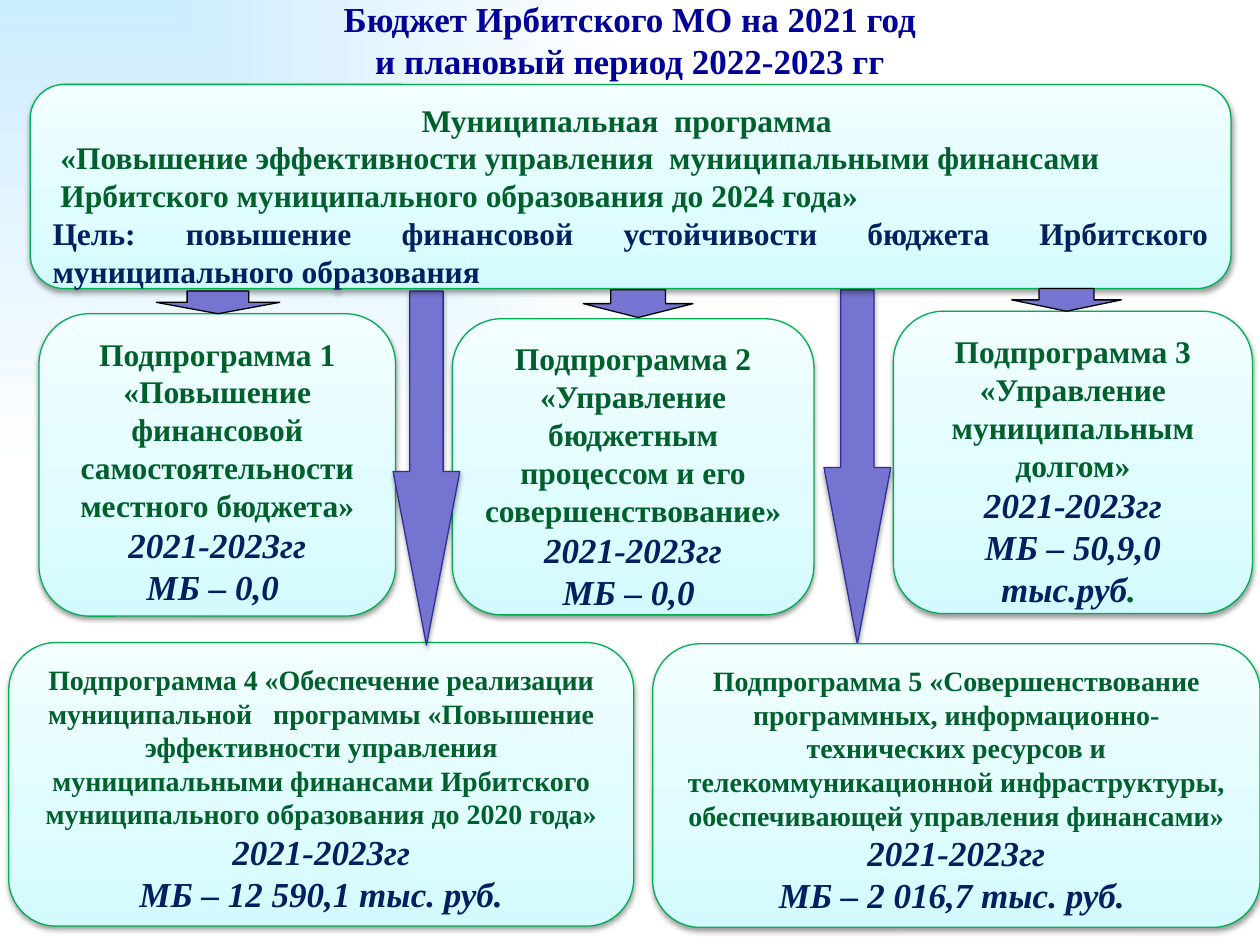
import pptx
import pptx.dml.color
import pptx.enum.shapes
import pptx.enum.text
import pptx.oxml
import pptx.oxml.ns
import pptx.util

Inches = pptx.util.Inches
Pt = pptx.util.Pt
Align = pptx.enum.text.PP_ALIGN
Anchor = pptx.enum.text.MSO_ANCHOR
Preset = pptx.enum.shapes.MSO_SHAPE

COLORS = {
    "title": "000099",
    "heading": "00602B",
    "amount": "002060",
    "card_line": "00B050",
    "arrow": "7575D1",
    "long_arrow_line": "2F2F98",
    "short_arrow_line": "000000",
    "shadow": "000000",
}
CARD_STOPS = [(0, "D3FBFF"), (35, "DFFCFF"), (100, "F2FEFF")]
BACKGROUND_STOPS = [(0, "CCECFF"), (100, "FFFFFF")]
UPWARD = '<a:lin ang="16200000" scaled="0"/>'
FROM_CORNER = '<a:path path="rect"><a:fillToRect r="100000" b="100000"/></a:path>'
PERIOD = "2021-2023гг"


def rgb(name):
    return pptx.dml.color.RGBColor.from_string(COLORS[name])


def set_gradient(owner, stops, direction):
    old = next(owner.iter(pptx.oxml.ns.qn("a:gradFill")))
    stop_xml = "".join(
        f'<a:gs pos="{position * 1000}"><a:srgbClr val="{color}"/></a:gs>'
        for position, color in stops
    )
    new = pptx.oxml.parse_xml(
        f'<a:gradFill {pptx.oxml.ns.nsdecls("a")} rotWithShape="1">'
        f"<a:gsLst>{stop_xml}</a:gsLst>{direction}</a:gradFill>"
    )
    old.getparent().replace(old, new)


class BudgetSlide:
    font_name = "Times New Roman"
    line_width = Pt(0.75)

    def __init__(self, presentation):
        self.slide = presentation.slides.add_slide(presentation.slide_layouts[5])

    def background(self):
        self.slide.background.fill.gradient()
        set_gradient(self.slide._element, BACKGROUND_STOPS, FROM_CORNER)

    def format_text(self, paragraph, size, color, italic=False, align=Align.CENTER):
        paragraph.alignment = align
        for run in paragraph.runs:
            run.font.name = self.font_name
            run.font.size = Pt(size)
            run.font.bold = True
            run.font.italic = italic
            run.font.color.rgb = rgb(color)

    def title(self, text, left, top, width, height):
        title = self.slide.shapes.title
        title.left, title.top = Inches(left), Inches(top)
        title.width, title.height = Inches(width), Inches(height)
        frame = title.text_frame
        frame.text = text
        frame.auto_size = pptx.enum.text.MSO_AUTO_SIZE.NONE
        frame.vertical_anchor = Anchor.MIDDLE
        for paragraph in frame.paragraphs:
            self.format_text(paragraph, 20, "title")

    def shape(self, preset, box, line_color):
        shape = self.slide.shapes.add_shape(preset, *map(Inches, box))
        shape.shadow.inherit = False
        shape.line.color.rgb = rgb(line_color)
        shape.line.width = self.line_width
        return shape

    def cast_shadow(self, shape):
        effects = shape._element.spPr.find(pptx.oxml.ns.qn("a:effectLst"))
        effects.append(pptx.oxml.parse_xml(
            f'<a:outerShdw {pptx.oxml.ns.nsdecls("a")} blurRad="{Pt(3.1)}" '
            f'dist="{Pt(1.6)}" dir="5400000" rotWithShape="0">'
            f'<a:srgbClr val="{COLORS["shadow"]}"><a:alpha val="38000"/></a:srgbClr>'
            "</a:outerShdw>"
        ))

    def panel(self, box, text):
        panel = self.shape(Preset.ROUNDED_RECTANGLE, box, "card_line")
        panel.fill.gradient()
        set_gradient(panel._element.spPr, CARD_STOPS, UPWARD)
        self.cast_shadow(panel)
        frame = panel.text_frame
        frame.word_wrap = True
        frame.vertical_anchor = Anchor.TOP
        frame.text = text
        return frame.paragraphs

    def program(self, box, lines):
        heading, *name, goal = self.panel(box, "\n".join(lines))
        self.format_text(heading, 18, "heading")
        for paragraph in name:
            self.format_text(paragraph, 18, "heading", align=Align.LEFT)
        self.format_text(goal, 18, "amount", align=Align.JUSTIFY)

    def subprogram(self, box, name, amount, size, ending=""):
        heading, period, budget = self.panel(box, "\n".join([name, PERIOD, amount]))
        self.format_text(heading, size, "heading")
        self.format_text(period, 20, "amount", italic=True)
        if ending:
            budget.add_run().text = ending
        self.format_text(budget, 20, "amount", italic=True)
        if ending:
            budget.runs[-1].font.color.rgb = rgb("heading")

    def arrow(self, box, line_color, head=0.5):
        arrow = self.shape(Preset.DOWN_ARROW, box, line_color)
        arrow.adjustments[1] = head
        arrow.fill.solid()
        arrow.fill.fore_color.rgb = rgb("arrow")
        return arrow

    def long_arrow(self, left, top, head):
        arrow = self.arrow((left, top, 0.53, 2.81), "long_arrow_line", head)
        self.cast_shadow(arrow)


def main():
    presentation = pptx.Presentation()
    presentation.slide_width = Inches(10)
    presentation.slide_height = Inches(7.5)
    budget = BudgetSlide(presentation)
    budget.background()
    budget.title(
        "Бюджет Ирбитского МО на 2021 год\nи плановый период 2022-2023 гг",
        0.5, 0, 9, 0.63,
    )

    budget.subprogram(
        (0.31, 2.49, 2.83, 2.4),
        "Подпрограмма 1 «Повышение финансовой самостоятельности местного бюджета»",
        "МБ – 0,0 ", 18,
    )
    budget.subprogram(
        (3.59, 2.53, 2.87, 2.35),
        "Подпрограмма 2 «Управление бюджетным процессом и его совершенствование»",
        "МБ – 0,0 ", 18,
    )
    budget.subprogram(
        (7.09, 2.47, 2.85, 2.4),
        "Подпрограмма 3 «Управление муниципальным долгом»",
        "МБ – 50,9,0 тыс.руб", 18, ending=". ",
    )
    budget.subprogram(
        (0.07, 5.1, 4.96, 2.25),
        "Подпрограмма 4 «Обеспечение реализации муниципальной   программы "
        "«Повышение эффективности управления муниципальными финансами "
        "Ирбитского муниципального образования до 2020 года»",
        "МБ – 12 590,1 тыс. руб.", 16,
    )
    budget.long_arrow(3.12, 2.31, 2.6)
    budget.long_arrow(6.54, 2.3, 2.64)
    budget.program((0.24, 0.67, 9.53, 1.62), [
        "Муниципальная  программа ",
        " «Повышение эффективности управления  муниципальными финансами",
        " Ирбитского муниципального образования до 2024 года»",
        "Цель: повышение финансовой устойчивости бюджета Ирбитского "
        "муниципального образования",
    ])
    budget.subprogram(
        (5.18, 5.11, 4.82, 2.25),
        "Подпрограмма 5 «Совершенствование программных, "
        "информационно-технических ресурсов и телекоммуникационной "
        "инфраструктуры, обеспечивающей управления финансами»",
        "МБ – 2 016,7 тыс. руб. ", 16,
    )
    for box in [(1.24, 2.31, 0.98, 0.18), (4.63, 2.3, 0.87, 0.22), (8.03, 2.29, 0.87, 0.18)]:
        budget.arrow(box, "short_arrow_line")

    presentation.save("out.pptx")


if __name__ == "__main__":
    main()
